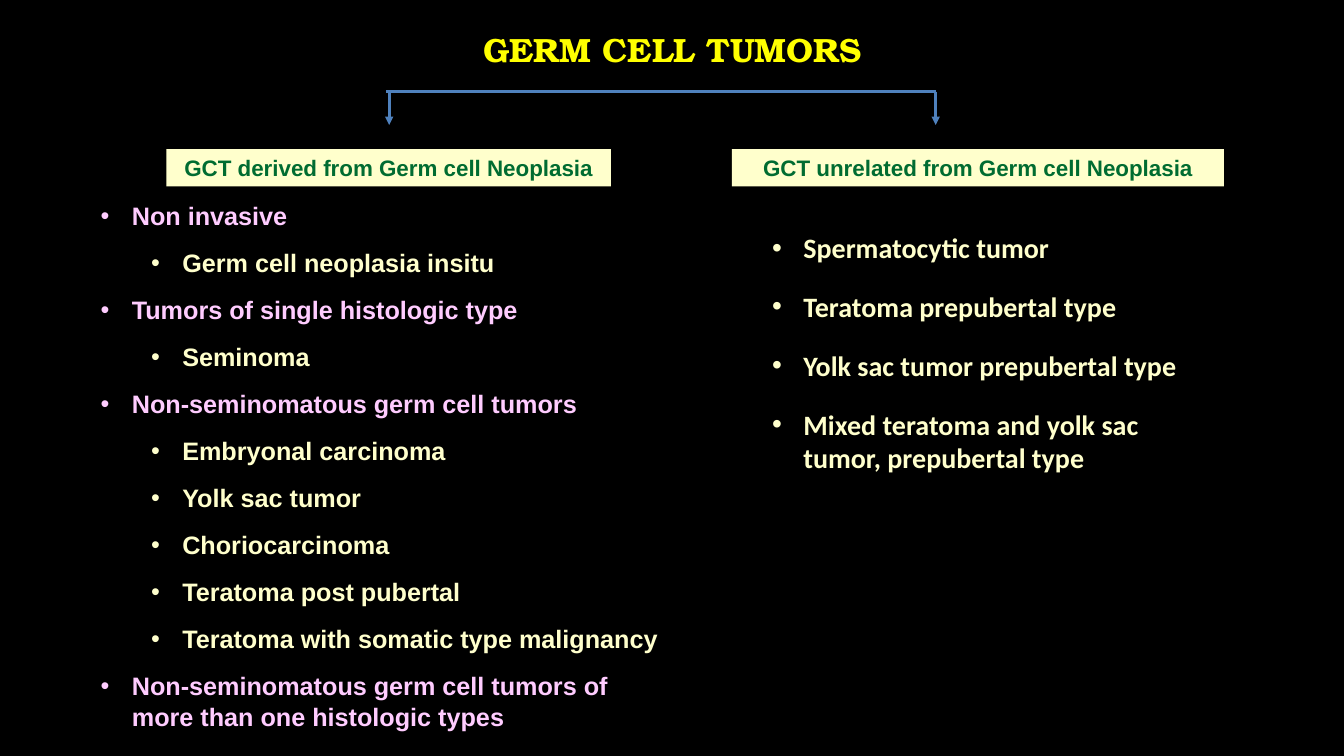
from lxml.etree import SubElement
from pptx import Presentation
from pptx.dml.color import RGBColor
from pptx.enum.shapes import MSO_CONNECTOR, MSO_SHAPE
from pptx.enum.text import MSO_ANCHOR, PP_ALIGN
from pptx.oxml.ns import qn
from pptx.util import Inches, Pt

BLACK = RGBColor(0x00, 0x00, 0x00)
YELLOW = RGBColor(0xFF, 0xFF, 0x00)
CREAM = RGBColor(0xFF, 0xFF, 0xCC)
PINK = RGBColor(0xFF, 0xCC, 0xFF)
GREEN = RGBColor(0x00, 0x6C, 0x31)
BLUE = RGBColor(0x4F, 0x81, 0xBD)

LEVEL_COLORS = [PINK, CREAM]
INDENT, LEVEL_STEP = 0.31, 0.5

DERIVED = [
    (0, "Non invasive"),
    (1, "Germ cell neoplasia insitu"),
    (0, "Tumors of single histologic type"),
    (1, "Seminoma"),
    (0, "Non-seminomatous germ cell tumors"),
    (1, "Embryonal carcinoma"),
    (1, "Yolk sac tumor"),
    (1, "Choriocarcinoma"),
    (1, "Teratoma post pubertal"),
    (1, "Teratoma with somatic type malignancy"),
    (0, "Non-seminomatous germ cell tumors of more than one histologic types"),
]
UNRELATED = [
    (0, "Spermatocytic tumor"),
    (0, "Teratoma prepubertal type"),
    (0, "Yolk sac tumor prepubertal type"),
    (0, "Mixed teratoma and yolk sac tumor, prepubertal type"),
]


def add_span(para, text, font, size, color):
    span = para.add_run()
    span.text = text
    span.font.name = font
    span.font.size = Pt(size)
    span.font.bold = True
    span.font.color.rgb = color


def add_title(page, box, text):
    title = page.shapes.title
    title.left, title.top, title.width, title.height = map(Inches, box)
    frame = title.text_frame
    frame.word_wrap = True
    frame.vertical_anchor = MSO_ANCHOR.MIDDLE
    para = frame.paragraphs[0]
    para.alignment = PP_ALIGN.CENTER
    para.line_spacing = 0.9
    add_span(para, text, "TeX Gyre Bonum", 24, YELLOW)


def add_heading(page, box, text):
    label = page.shapes.add_shape(MSO_SHAPE.RECTANGLE, *map(Inches, box))
    label.shadow.inherit = False
    label.fill.solid()
    label.fill.fore_color.rgb = CREAM
    label.line.fill.background()
    frame = label.text_frame
    frame.word_wrap = True
    frame.vertical_anchor = MSO_ANCHOR.MIDDLE
    para = frame.paragraphs[0]
    para.alignment = PP_ALIGN.CENTER
    add_span(para, text, "Arial", 16, GREEN)


def add_bullet(para, level):
    props = para._p.get_or_add_pPr()
    props.set("marL", str(Inches(INDENT + level * LEVEL_STEP)))
    props.set("indent", str(-Inches(INDENT)))
    SubElement(props, qn("a:buFont"), typeface="Arial")
    SubElement(props, qn("a:buChar"), char="•")


def add_list(page, box, items, font, size, gap, colors):
    frame = page.shapes.add_textbox(*map(Inches, box)).text_frame
    frame.word_wrap = True
    for index, (level, text) in enumerate(items):
        para = frame.add_paragraph() if index else frame.paragraphs[0]
        add_bullet(para, level)
        para.level = level
        para.space_after = Pt(gap)
        add_span(para, text, font, size, colors[level])


def add_line(page, start, end, arrow=False):
    line = page.shapes.add_connector(
        MSO_CONNECTOR.STRAIGHT, *map(Inches, (*start, *end)))
    line.line.color.rgb = BLUE
    line.line.width = Pt(2)
    if arrow:
        SubElement(line.line._get_or_add_ln(), qn("a:tailEnd"), type="triangle")
    SubElement(line._element.spPr, qn("a:effectLst"))


def add_fork(page, box):
    left, top, width, height = box
    right, bottom = left + width, top + height
    add_line(page, (left, top), (right, top))
    for x in (left + 0.03, right):
        add_line(page, (x, top), (x, bottom), arrow=True)


def build_tumor_slide(deck):
    page = deck.slides.add_slide(deck.slide_layouts[5])
    page.background.fill.solid()
    page.background.fill.fore_color.rgb = BLACK
    add_title(page, (2.17, 0, 9, 1.03), "GERM CELL TUMORS")
    add_heading(page, (1.65, 1.48, 4.41, 0.37), "GCT derived from Germ cell Neoplasia")
    add_heading(page, (7.26, 1.48, 4.88, 0.37), "GCT unrelated from Germ cell Neoplasia")
    add_list(page, (0.9, 1.94, 5.86, 5.42), DERIVED, "Arial", 18, 12, LEVEL_COLORS)
    add_list(page, (7.56, 2.24, 4.58, 2.54), UNRELATED, "Calibri", 20, 18, [CREAM])
    add_fork(page, (3.83, 0.91, 5.45, 0.33))


def main():
    deck = Presentation()
    deck.slide_width, deck.slide_height = Inches(13.33), Inches(7.5)
    build_tumor_slide(deck)
    deck.save("out.pptx")


if __name__ == "__main__":
    main()
